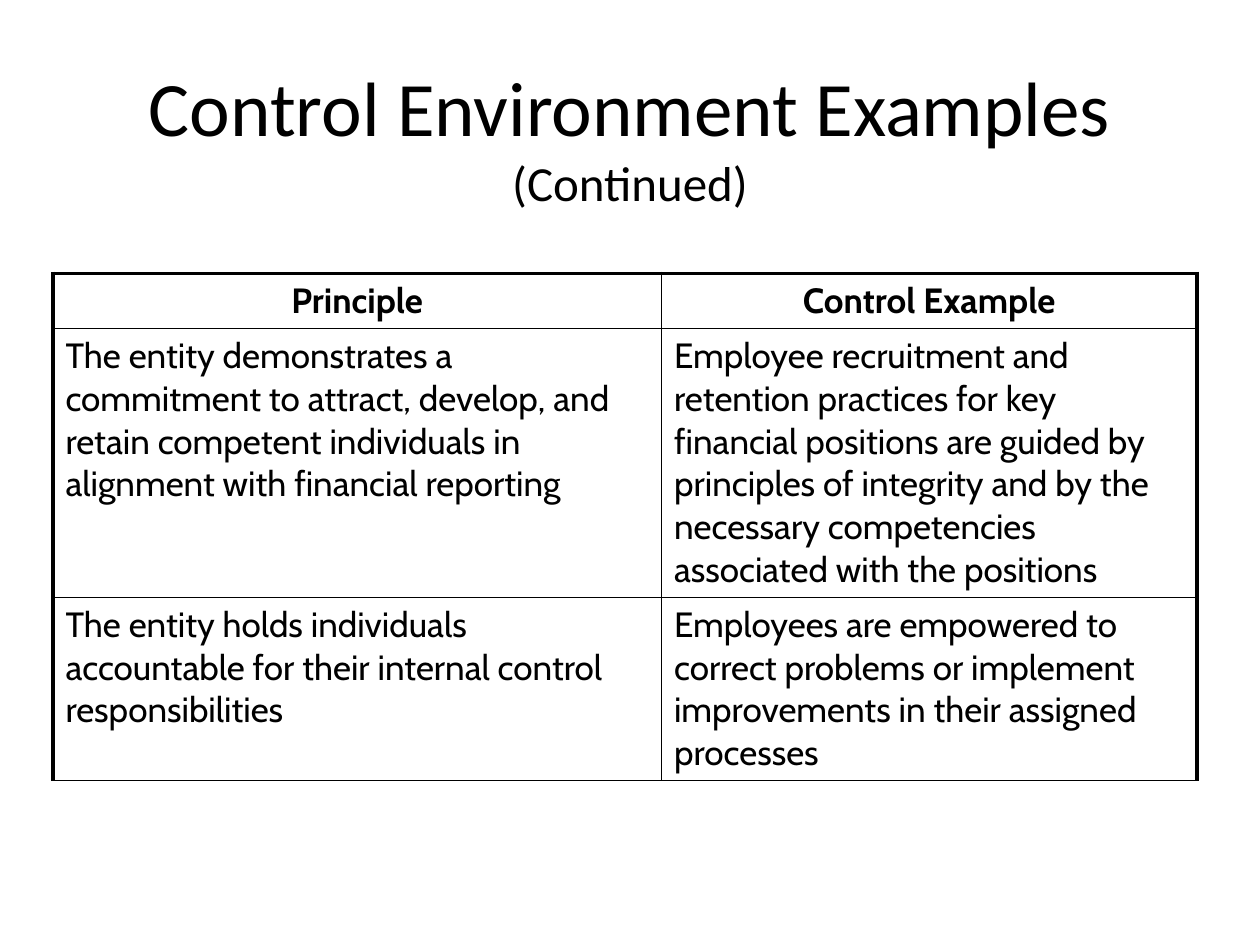
import dataclasses

import pptx
import pptx.dml.color
import pptx.enum.text
import pptx.oxml
import pptx.util
from pptx.util import Inches

ALIGN = pptx.enum.text.PP_ALIGN
ANCHOR = pptx.enum.text.MSO_ANCHOR


@dataclasses.dataclass(frozen=True)
class Theme:
    ink: str = "000000"
    paper: str = "FFFFFF"
    head_font: str = "Calibri"
    body_font: str = "Cabin"
    head_size: int = 44
    sub_size: int = 28
    body_size: int = 20
    thick: float = 2.25
    thin: float = 1


THEME = Theme()
HEADS = ("Principle", "Control Example")
ROWS = (
    ("The entity demonstrates a commitment to attract, develop, and retain "
     "competent individuals in alignment with financial reporting",
     "Employee recruitment and retention practices for key financial positions "
     "are guided by principles of integrity and by the necessary competencies "
     "associated with the positions"),
    ("The entity holds individuals accountable for their internal control "
     "responsibilities",
     "Employees are empowered to correct problems or implement improvements in "
     "their assigned processes"),
)


def style(run, font, size, bold=False):
    run.font.name = font
    run.font.size = pptx.util.Pt(size)
    run.font.bold = bold
    run.font.color.rgb = pptx.dml.color.RGBColor.from_string(THEME.ink)


def border(cell, widths):
    """Draw cell edges; widths maps L, R, T and B to points."""
    props = cell._tc.get_or_add_tcPr()
    for place, (side, width) in enumerate(widths.items()):
        line = pptx.oxml.parse_xml(
            '<a:ln%s xmlns:a="http://schemas.openxmlformats.org/drawingml/2006/main"'
            ' w="%d"><a:solidFill><a:srgbClr val="%s"/></a:solidFill></a:ln%s>'
            % (side, pptx.util.Pt(width), THEME.ink, side))
        props.insert(place, line)


def add_title(slide, left, top, width, height):
    title = slide.shapes.title
    title.left, title.top, title.width, title.height = left, top, width, height
    frame = title.text_frame
    frame.text = "Control Environment Examples\v(Continued)"
    frame.word_wrap = True
    frame.vertical_anchor = ANCHOR.MIDDLE
    para = frame.paragraphs[0]
    para.alignment = ALIGN.CENTER
    for run, size in zip(para.runs, (THEME.head_size, THEME.sub_size)):
        style(run, THEME.head_font, size)


def add_grid(slide, left, top, cols, rows):
    data = (HEADS,) + ROWS
    grid = slide.shapes.add_table(
        len(rows), len(cols), left, top, sum(cols), sum(rows)).table
    grid.horz_banding = False
    for col, width in zip(grid.columns, cols):
        col.width = width
    for row, height in zip(grid.rows, rows):
        row.height = height

    for r, texts in enumerate(data):
        for c, text in enumerate(texts):
            cell = grid.cell(r, c)
            cell.text_frame.text = text
            cell.fill.solid()
            cell.fill.fore_color.rgb = pptx.dml.color.RGBColor.from_string(
                THEME.paper)
            para = cell.text_frame.paragraphs[0]
            para.alignment = ALIGN.CENTER if r == 0 else ALIGN.LEFT
            style(para.runs[0], THEME.body_font, THEME.body_size, r == 0)
            # Thick outer frame on the left, right and top
            outer = {"L": c == 0, "R": c == len(cols) - 1, "T": r == 0, "B": False}
            border(cell, {side: THEME.thick if edge else THEME.thin
                          for side, edge in outer.items()})


def main():
    deck = pptx.Presentation()
    deck.slide_width, deck.slide_height = Inches(10), Inches(7.5)
    slide = deck.slides.add_slide(deck.slide_layouts[5])
    add_title(slide, Inches(0.5), Inches(0.32), Inches(9), Inches(1.51))
    add_grid(slide, Inches(0.42), Inches(2.17),
             [Inches(4.83), Inches(4.25)],
             [Inches(0.43), Inches(2.13), Inches(1.45)])
    deck.save("out.pptx")


if __name__ == "__main__":
    main()
